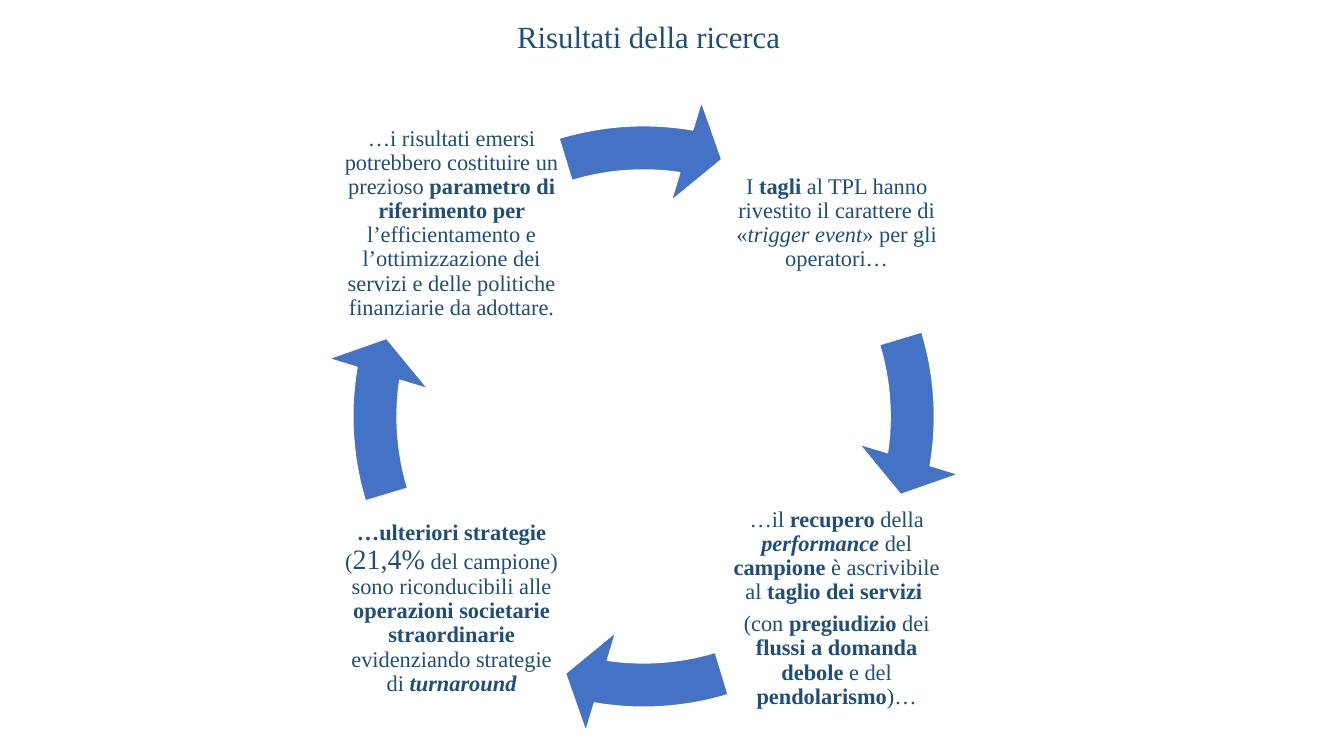
from pptx import Presentation
from pptx.dml.color import RGBColor
from pptx.enum.shapes import MSO_SHAPE
from pptx.enum.text import MSO_ANCHOR, MSO_AUTO_SIZE, PP_ALIGN
from pptx.util import Emu, Inches, Pt

# Content: each run is (text, style), with b = bold, i = italic, L = larger
TITLE = "Risultati della ricerca"
STEPS = [  # clockwise from top right: (column, row, paragraphs)
    (1, 0, [[("I ", ""), ("tagli ", "b"), ("al TPL hanno rivestito il carattere di «", ""),
             ("trigger event", "i"), ("» per gli operatori…", "")]]),
    (1, 1, [[("…il ", ""), ("recupero ", "b"), ("della ", ""), ("performance ", "bi"),
             ("del ", ""), ("campione", "b"), (" è ascrivibile al ", ""),
             ("taglio dei servizi ", "b")],
            [("(con ", ""), ("pregiudizio", "b"), (" dei ", ""),
             ("flussi a domanda debole", "b"), (" e del ", ""),
             ("pendolarismo", "b"), (")…", "")]]),
    (0, 1, [[("…ulteriori strategie ", "b"), ("(", ""), ("21,4%", "L"),
             (" del campione) sono riconducibili alle ", ""),
             ("operazioni societarie straordinarie ", "b"),
             ("evidenziando strategie di ", ""), ("turnaround", "bi")]]),
    (0, 0, [[("…i risultati emersi potrebbero costituire un prezioso", ""),
             (" parametro di riferimento per ", "b"),
             ("l’efficientamento e l’ottimizzazione dei servizi e delle politiche "
              "finanziarie da adottare.", "")]]),
]

COLORS = {"text": "1F4E79", "arrow": "4472C4", "outline": "FFFFFF"}
FONT = "Times New Roman"

# Geometry in px
PX = 914400 / 100.8
TITLE_BOX = (501, 13, 295, 47)
COLUMNS, ROWS, STEP_SIZE = (338, 723), (110, 495), 227
CYCLE_BOX = (323, 96, 641, 641)

# Arrow angles in degrees; preset adjustments count 60000ths over 100000
DEGREE = 0.6
HEAD_ANGLE, ARROW_END, ARROW_START, QUARTER = 7.76, 9.15, 343.09, 90


def px(*lengths):
    return [Emu(round(length * PX)) for length in lengths]


def color(name):
    return RGBColor.from_string(COLORS[name])


def write(frame, paragraphs, size=16, large=20, line_spacing=1.0, space_after=0,
          wrap=True, margin=None):
    frame.word_wrap = wrap
    frame.auto_size = MSO_AUTO_SIZE.NONE
    frame.vertical_anchor = MSO_ANCHOR.MIDDLE
    if margin is not None:
        frame.margin_left = frame.margin_right = Pt(margin)
        frame.margin_top = frame.margin_bottom = Pt(margin)
    for index, runs in enumerate(paragraphs):
        paragraph = frame.add_paragraph() if index else frame.paragraphs[0]
        paragraph.alignment = PP_ALIGN.CENTER
        paragraph.line_spacing = line_spacing
        paragraph.space_before = Pt(0)
        paragraph.space_after = Pt(space_after)
        for text, style in runs:
            run = paragraph.add_run()
            run.text = text
            run.font.name = FONT
            run.font.size = Pt(large if "L" in style else size)
            run.font.bold = "b" in style
            run.font.italic = "i" in style
            run.font.color.rgb = color("text")


presentation = Presentation()
presentation.slide_width = Inches(13.33)
presentation.slide_height = Inches(7.5)
slide = presentation.slides.add_slide(presentation.slide_layouts[5])

# Title
title = slide.shapes.title
title.left, title.top, title.width, title.height = px(*TITLE_BOX)
write(title.text_frame, [[(TITLE, "")]], size=22, wrap=False)

# Cycle: each step is followed by the arrow that leaves it
for quarter, (column, row, paragraphs) in enumerate(STEPS):
    box = slide.shapes.add_textbox(*px(COLUMNS[column], ROWS[row], STEP_SIZE, STEP_SIZE))
    write(box.text_frame, paragraphs, line_spacing=0.9, space_after=5.6, margin=1.6)

    arrow = slide.shapes.add_shape(MSO_SHAPE.CIRCULAR_ARROW, *px(*CYCLE_BOX))
    turn = quarter * QUARTER
    angles = (HEAD_ANGLE, ARROW_END + turn, (ARROW_START + turn) % 360)
    values = [0.069, *(angle * DEGREE for angle in angles), 0.081]
    for index, value in enumerate(values):
        arrow.adjustments[index] = value
    arrow.shadow.inherit = False
    arrow.fill.solid()
    arrow.fill.fore_color.rgb = color("arrow")
    arrow.line.color.rgb = color("outline")
    arrow.line.width = Pt(1)

presentation.save("out.pptx")
